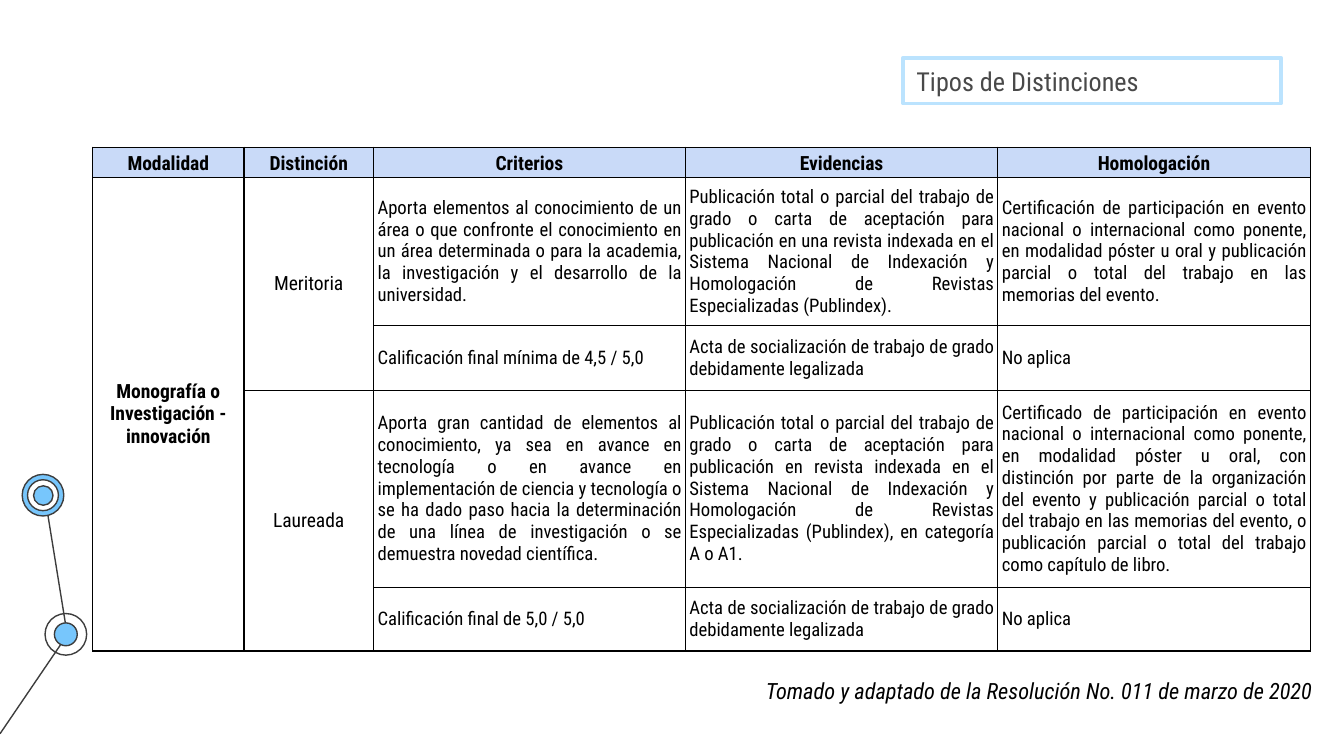
from dataclasses import dataclass
from itertools import product

import pptx
import pptx.dml.color
import pptx.enum.shapes
import pptx.enum.text
import pptx.oxml
import pptx.oxml.ns
import pptx.util

EMU_PER_PX = 4572  # 200 px to the inch

ALIGN = pptx.enum.text.PP_ALIGN
ANCHOR = pptx.enum.text.MSO_ANCHOR
SHAPE = pptx.enum.shapes.MSO_SHAPE


@dataclass(frozen=True)
class Theme:
    font: str = "Roboto Condensed"
    ink: str = "000000"
    title_ink: str = "494949"
    title_border: str = "BBE3FE"
    paper: str = "FFFFFF"
    header: str = "C9DAF8"
    node: str = "77C6FC"
    wire: str = "3D3D3D"
    title_size: float = 14
    source_size: float = 12
    label_size: float = 10.5
    body_size: float = 10
    hairline: float = 0.75
    title_line: float = 2


THEME = Theme()


@dataclass(frozen=True)
class Style:
    size: float
    color: str = THEME.ink
    bold: bool = False
    italic: bool = False
    align: ALIGN = ALIGN.LEFT


@dataclass(frozen=True)
class Cell:
    row: int
    column: int
    text: str
    style: Style
    row_span: int = 1


@dataclass(frozen=True)
class Wire:
    x1: int
    y1: int
    x2: int
    y2: int


@dataclass(frozen=True)
class Disc:
    x: int
    y: int
    diameter: int
    fill: str | None


HEADING = Style(THEME.label_size, bold=True, align=ALIGN.CENTER)
LABEL = Style(THEME.label_size, align=ALIGN.CENTER)
BODY = Style(THEME.body_size, align=ALIGN.JUSTIFY)

WIRES = [Wire(100, 944, 66, 734), Wire(0, 1092, 98, 948)]
DISCS = [
    Disc(98, 944, 62, None),
    Disc(98, 944, 34, THEME.node),
    Disc(64, 737, 62, THEME.node),
    Disc(64, 737, 46, THEME.paper),
    Disc(64, 737, 29, THEME.node),
]

COLUMNS = [225, 193, 464, 465, 465]
ROWS = [45, 221, 96, 293, 95]
HEADINGS = ["Modalidad", "Distinción", "Criterios", "Evidencias", "Homologación"]
LABELS = [
    Cell(1, 0, "Monografía o Investigación - innovación", HEADING, 4),
    Cell(1, 1, "Meritoria", LABEL, 2),
    Cell(3, 1, "Laureada", LABEL, 2),
]
RECORD = "Acta de socialización de trabajo de grado debidamente legalizada"
NONE = "No aplica"
DETAILS = [
    [
        "Aporta elementos al conocimiento de un área o que confronte el conocimiento en un área "
        "determinada o para la academia, la investigación y el desarrollo de la universidad.",
        "Publicación total o parcial del trabajo de grado o carta de aceptación para publicación "
        "en una revista indexada en el Sistema Nacional de Indexación y Homologación de Revistas "
        "Especializadas (Publindex).",
        "Certificación de participación en evento nacional o internacional como ponente, en "
        "modalidad póster u oral y publicación parcial o total del trabajo en las memorias del "
        "evento.",
    ],
    ["Calificación final mínima de 4,5 / 5,0", RECORD, NONE],
    [
        "Aporta gran cantidad de elementos al conocimiento, ya sea en avance en tecnología o en "
        "avance en implementación de ciencia y tecnología o se ha dado paso hacia la "
        "determinación de una línea de investigación o se demuestra novedad científica.",
        "Publicación total o parcial del trabajo de grado o carta de aceptación para publicación "
        "en revista indexada en el Sistema Nacional de Indexación y Homologación de Revistas "
        "Especializadas (Publindex), en categoría A o A1.",
        "Certificado de participación en evento nacional o internacional como ponente, en "
        "modalidad póster u oral, con distinción por parte de la organización del evento y "
        "publicación parcial o total del trabajo en las memorias del evento, o publicación "
        "parcial o total del trabajo como capítulo de libro.",
    ],
    ["Calificación final de 5,0 / 5,0", RECORD, NONE],
]


def px(length: int) -> pptx.util.Emu:
    return pptx.util.Emu(length * EMU_PER_PX)


def rgb(color: str) -> pptx.dml.color.RGBColor:
    return pptx.dml.color.RGBColor.from_string(color)


def write(frame, text: str, style: Style) -> None:
    frame.word_wrap = True
    para = frame.paragraphs[0]
    para.alignment = style.align
    span = para.add_run()
    span.text = text
    span.font.name = THEME.font
    span.font.size = pptx.util.Pt(style.size)
    span.font.bold = style.bold
    span.font.italic = style.italic
    span.font.color.rgb = rgb(style.color)


def set_line(line, color: str, width: float) -> None:
    line.color.rgb = rgb(color)
    line.width = pptx.util.Pt(width)


def set_fill(fill, color: str | None) -> None:
    if color is None:
        fill.background()
    else:
        fill.solid()
        fill.fore_color.rgb = rgb(color)


def draw_wire(page, wire: Wire) -> None:
    connector = page.shapes.add_connector(
        pptx.enum.shapes.MSO_CONNECTOR.STRAIGHT, px(wire.x1), px(wire.y1), px(wire.x2), px(wire.y2)
    )
    set_line(connector.line, THEME.wire, THEME.hairline)
    properties = connector._element.spPr
    properties.append(properties.makeelement(pptx.oxml.ns.qn("a:effectLst"), {}))


def draw_disc(page, disc: Disc) -> None:
    left, top = (px(centre - disc.diameter // 2) for centre in (disc.x, disc.y))
    oval = page.shapes.add_shape(SHAPE.OVAL, left, top, px(disc.diameter), px(disc.diameter))
    oval.shadow.inherit = False
    set_fill(oval.fill, disc.fill)
    set_line(oval.line, THEME.wire, THEME.hairline)


def add_borders(cell) -> None:
    properties = cell._tc.get_or_add_tcPr()
    for index, side in enumerate(("lnL", "lnR", "lnT", "lnB")):
        border = pptx.oxml.parse_xml(
            f'<a:{side} {pptx.oxml.ns.nsdecls("a")} w="{pptx.util.Pt(THEME.hairline)}">'
            f'<a:solidFill><a:srgbClr val="{THEME.ink}"/></a:solidFill></a:{side}>'
        )
        properties.insert(index, border)


def draw_table(page, cells: list[Cell]) -> None:
    table = page.shapes.add_table(
        len(ROWS), len(COLUMNS), px(138), px(219), px(sum(COLUMNS)), px(sum(ROWS))
    ).table
    for column, width in zip(table.columns, COLUMNS):
        column.width = px(width)
    for row, height in zip(table.rows, ROWS):
        row.height = px(height)
    for row, column in product(range(len(ROWS)), range(len(COLUMNS))):
        cell = table.cell(row, column)
        cell.margin_left = cell.margin_right = px(6)
        cell.margin_top = cell.margin_bottom = px(4)
        cell.vertical_anchor = ANCHOR.MIDDLE if row else ANCHOR.BOTTOM
        set_fill(cell.fill, None if row else THEME.header)
        add_borders(cell)
    for entry in cells:
        cell = table.cell(entry.row, entry.column)
        if entry.row_span > 1:
            cell.merge(table.cell(entry.row + entry.row_span - 1, entry.column))
        write(cell.text_frame, entry.text, entry.style)


def main() -> None:
    deck = pptx.Presentation()
    deck.slide_width, deck.slide_height = px(2000), px(1125)
    page = deck.slides.add_slide(deck.slide_layouts[6])

    for wire in WIRES:
        draw_wire(page, wire)
    for disc in DISCS:
        draw_disc(page, disc)

    headings = [Cell(0, column, text, HEADING) for column, text in enumerate(HEADINGS)]
    details = [
        Cell(row, column, text, BODY)
        for row, texts in enumerate(DETAILS, 1)
        for column, text in enumerate(texts, 2)
    ]
    draw_table(page, headings + LABELS + details)

    source = page.shapes.add_textbox(px(1120), px(998), px(1068), px(142))
    write(source.text_frame, "Tomado y adaptado de la Resolución No. 011 de marzo de 2020",
          Style(THEME.source_size, italic=True))

    title = page.shapes.add_shape(SHAPE.RECTANGLE, px(1344), px(86), px(562), px(68))
    title.shadow.inherit = False
    set_fill(title.fill, THEME.paper)
    set_line(title.line, THEME.title_border, THEME.title_line)
    title.text_frame.vertical_anchor = ANCHOR.MIDDLE
    write(title.text_frame, "Tipos de Distinciones", Style(THEME.title_size, THEME.title_ink))

    deck.save("out.pptx")


if __name__ == "__main__":
    main()
